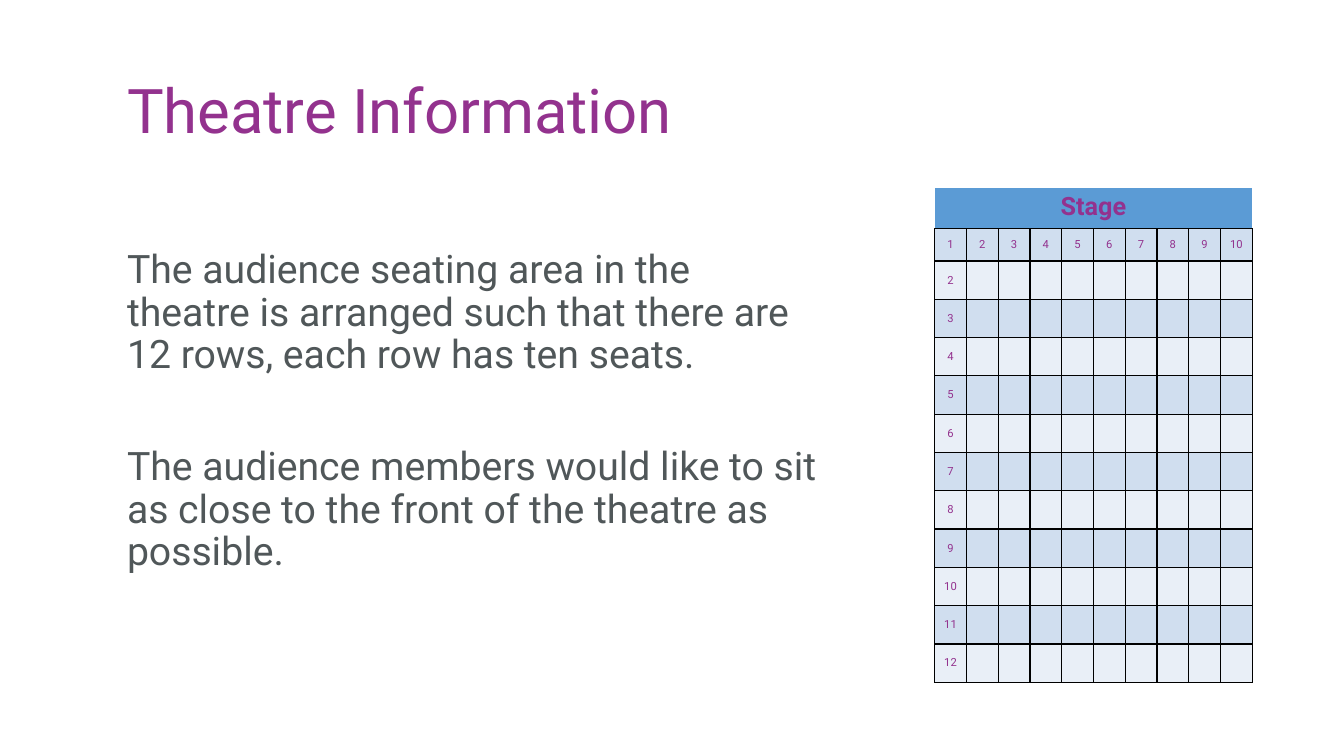
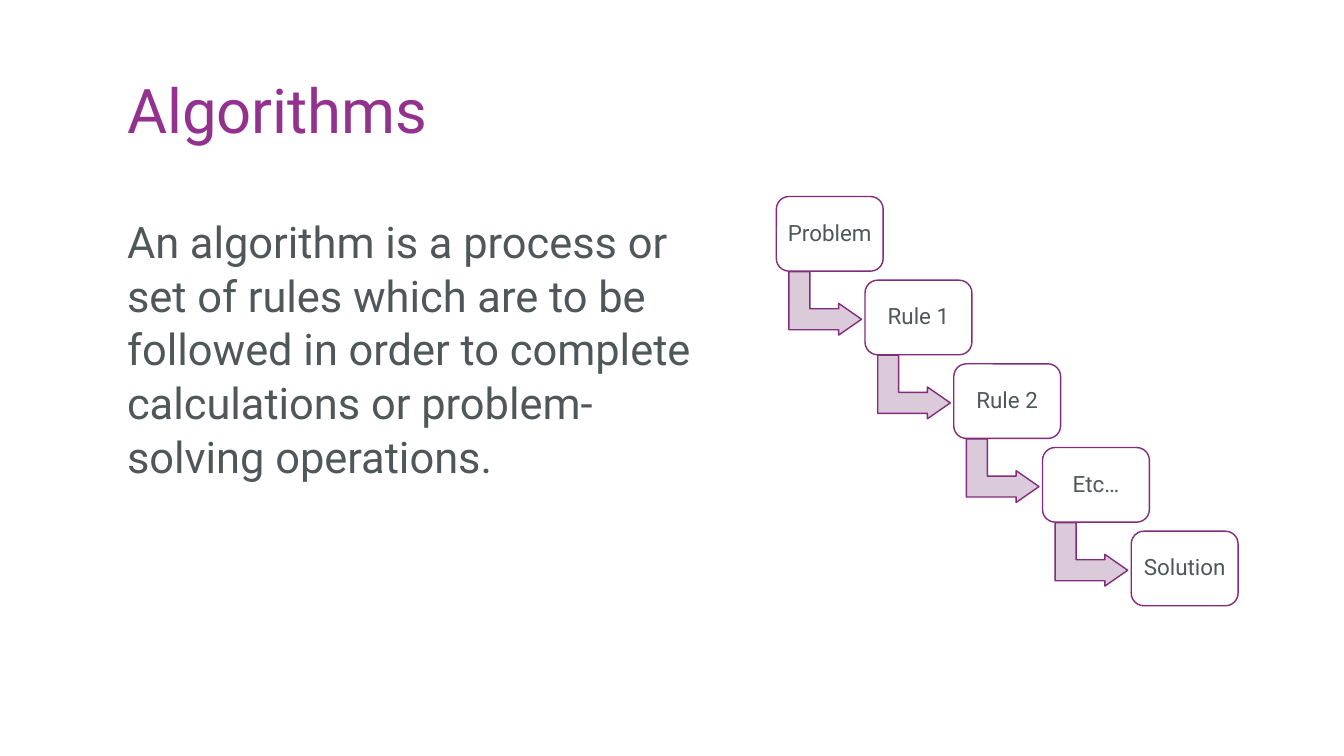
"""Build two slides on theatre seating and algorithms."""
from lxml.etree import SubElement
from pptx import Presentation
from pptx.dml.color import RGBColor
from pptx.enum.shapes import MSO_SHAPE as Shape
from pptx.enum.text import MSO_ANCHOR as Anchor, MSO_AUTO_SIZE as AutoSize, PP_ALIGN as Align
from pptx.oxml.ns import qn
from pptx.util import Inches, Pt

FONT = "Roboto"
COLORS = {
    "title": "93328E", "text": "505759", "line": "832B7C", "arrow": "DBCADA",
    "box": "FFFFFF", "stage": "5B9BD5", "odd": "D0DEEF", "even": "E9EFF7",
    "border": "000000",
}

THEATRE_TITLE = "Theatre Information"
THEATRE_TEXT = [
    "The audience seating area in the theatre is arranged such that there are 12 rows, "
    "each row has ten seats.",
    "The audience members would like to sit as close to the front of the theatre as possible.",
]
STAGE_LABEL = "Stage"
SEAT_ROWS, SEATS_PER_ROW = 12, 10

ALGORITHM_TITLE = "Algorithms"
ALGORITHM_TEXT = [
    "An algorithm is a process or set of rules which are to be followed in order to "
    "complete calculations or problem-solving operations.",
]
STEPS = ["Problem", "Rule 1", "Rule 2", "Etc…", "Solution"]

TITLE_AREA = (1.26, 0.4, 11.15, 1.45)
THEATRE_AREA = (1.26, 2.43, 6.98, 3.67)
ALGORITHM_AREA = (1.26, 2.07, 5.75, 4.07)
SEATING_LEFT, SEATING_TOP, SEATING_WIDTH = 9.27, 1.86, 3.15
STAGE_HEIGHT, FIRST_ROW_HEIGHT, ROW_HEIGHT = 0.41, 0.32, 0.38
STEP_LEFT, STEP_TOP, STEP_WIDTH, STEP_HEIGHT = 7.7, 1.95, 1.06, 0.74
STEP_RIGHT, STEP_DOWN = 0.88, 0.83
ARROW_OFFSET, ARROW_SIZE = (0.17, 0.7), (0.63, 0.72)


def rgb(name):
    return RGBColor.from_string(COLORS[name])


def place(shape, area):
    shape.left, shape.top, shape.width, shape.height = map(Inches, area)


def set_margins(target, left, top, right, bottom):
    target.margin_left, target.margin_top = Inches(left), Inches(top)
    target.margin_right, target.margin_bottom = Inches(right), Inches(bottom)


def write(frame, *texts, size, color="text", bold=False, align=Align.LEFT,
          line_spacing=1.0, gap=0, plain=False):
    for index, text in enumerate(texts):
        paragraph = frame.add_paragraph() if index else frame.paragraphs[0]
        if plain:
            properties = paragraph._p.get_or_add_pPr()
            properties.set("marL", "0")
            properties.set("indent", "0")
            SubElement(properties, qn("a:buNone"))
        paragraph.alignment = align
        paragraph.line_spacing = line_spacing
        paragraph.space_before = Pt(gap if index else 0)
        run = paragraph.add_run()
        run.text = text
        run.font.name, run.font.size, run.font.bold = FONT, Pt(size), bold
        run.font.color.rgb = rgb(color)


def fill_placeholder(shape, area, anchor, *texts, **text_format):
    place(shape, area)
    frame = shape.text_frame
    frame.word_wrap, frame.auto_size = True, AutoSize.NONE
    frame.vertical_anchor = anchor
    set_margins(frame, 0, 0.05, 0.1, 0.05)
    write(frame, *texts, **text_format)


def add_slide(presentation, title, texts, area, **text_format):
    slide = presentation.slides.add_slide(presentation.slide_layouts[1])
    fill_placeholder(slide.shapes.title, TITLE_AREA, Anchor.MIDDLE, title,
                     size=44, color="title", line_spacing=0.9)
    fill_placeholder(slide.placeholders[1], area, Anchor.TOP, *texts,
                     plain=True, **text_format)
    return slide


def fill_cell(cell, color):
    cell.fill.solid()
    cell.fill.fore_color.rgb = rgb(color)


def add_borders(cell):
    properties = cell._tc.get_or_add_tcPr()
    for side in ("lnL", "lnR", "lnT", "lnB"):
        line = SubElement(properties, qn(f"a:{side}"), w=str(Pt(1)))
        solid = SubElement(line, qn("a:solidFill"))
        SubElement(solid, qn("a:srgbClr"), val=COLORS["border"])


def add_seating(slide):
    heights = [STAGE_HEIGHT, FIRST_ROW_HEIGHT] + [ROW_HEIGHT] * (SEAT_ROWS - 1)
    table = slide.shapes.add_table(
        len(heights), SEATS_PER_ROW, Inches(SEATING_LEFT), Inches(SEATING_TOP),
        Inches(SEATING_WIDTH), Inches(sum(heights))).table
    table.first_row = table.horz_banding = False
    for column in table.columns:
        column.width = Inches(SEATING_WIDTH / SEATS_PER_ROW)
    for row, height in zip(table.rows, heights):
        row.height = Inches(height)

    stage = table.cell(0, 0)
    stage.merge(table.cell(0, SEATS_PER_ROW - 1))
    fill_cell(stage, "stage")
    write(stage.text_frame, STAGE_LABEL, size=18, color="title", bold=True, align=Align.CENTER)

    for row in range(1, SEAT_ROWS + 1):
        for seat in range(1, SEATS_PER_ROW + 1):
            cell = table.cell(row, seat - 1)
            add_borders(cell)
            fill_cell(cell, "odd" if row % 2 else "even")
            cell.vertical_anchor = Anchor.MIDDLE
            set_margins(cell, 0.05, 0, 0.05, 0)
            if row == 1 or seat == 1:
                write(cell.text_frame, str(max(row, seat)), size=8, color="title",
                      align=Align.CENTER)


def add_outlined(slide, kind, area, fill, adjustments):
    shape = slide.shapes.add_shape(kind, *map(Inches, area))
    shape.shadow.inherit = False
    shape.fill.solid()
    shape.fill.fore_color.rgb = rgb(fill)
    shape.line.color.rgb, shape.line.width = rgb("line"), Pt(1)
    for index, value in enumerate(adjustments):
        shape.adjustments[index] = value
    return shape


def add_steps(slide):
    for index, label in enumerate(STEPS):
        left, top = STEP_LEFT + index * STEP_RIGHT, STEP_TOP + index * STEP_DOWN
        if index < len(STEPS) - 1:
            arrow_area = (left + ARROW_OFFSET[0], top + ARROW_OFFSET[1], *ARROW_SIZE)
            arrow = add_outlined(slide, Shape.BENT_UP_ARROW, arrow_area, "arrow",
                                 (0.33, 0.25, 0.36))
            arrow.rotation = 90
        box = add_outlined(slide, Shape.ROUNDED_RECTANGLE,
                           (left, top, STEP_WIDTH, STEP_HEIGHT), "box", (0.17,))
        frame = box.text_frame
        frame.word_wrap, frame.vertical_anchor = True, Anchor.MIDDLE
        set_margins(frame, 0.07, 0.07, 0.07, 0.07)
        write(frame, label, size=16, align=Align.CENTER, line_spacing=0.9)


def main():
    presentation = Presentation()
    presentation.slide_width, presentation.slide_height = Inches(13.33), Inches(7.5)
    theatre = add_slide(presentation, THEATRE_TITLE, THEATRE_TEXT, THEATRE_AREA,
                        size=28, line_spacing=0.9, gap=50)
    add_seating(theatre)
    algorithms = add_slide(presentation, ALGORITHM_TITLE, ALGORITHM_TEXT, ALGORITHM_AREA,
                           size=31, line_spacing=1.03)
    add_steps(algorithms)
    presentation.save("out.pptx")


if __name__ == "__main__":
    main()
